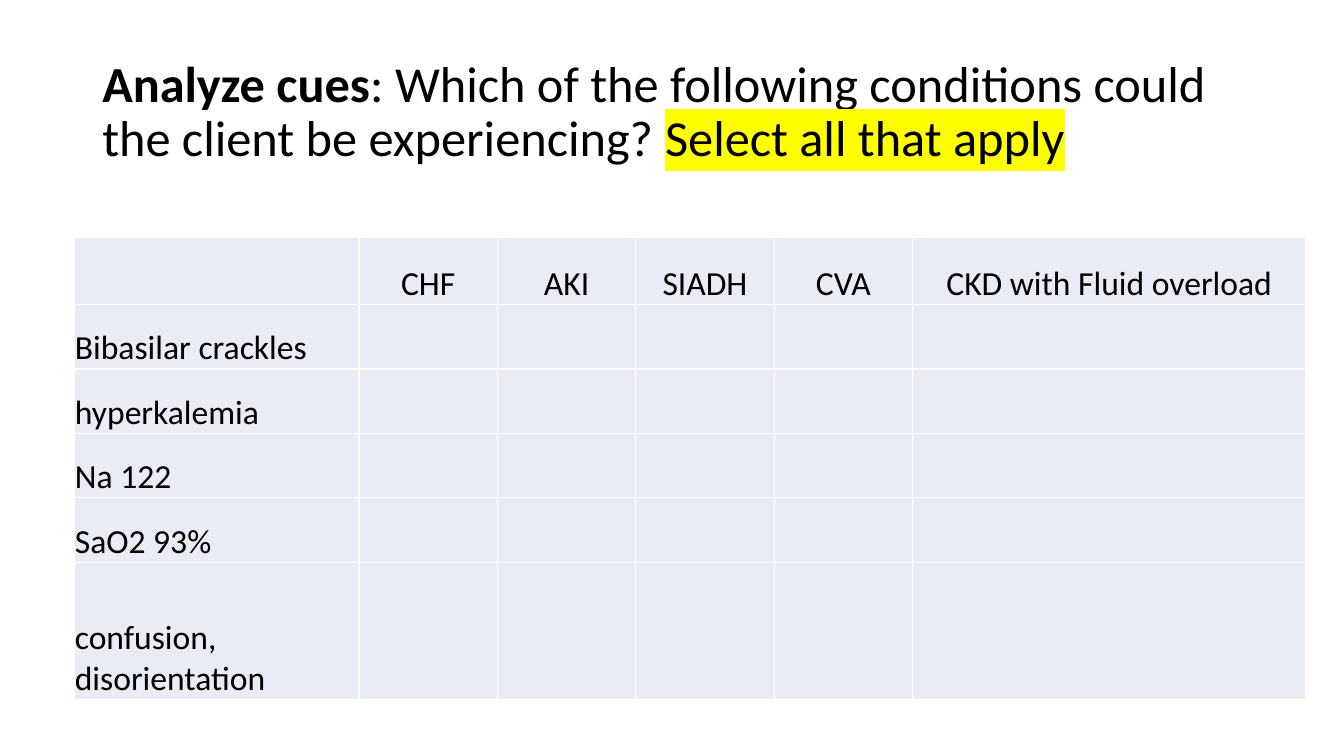
from lxml import etree
from pptx import Presentation
from pptx import util as u
from pptx.dml import color as dml
from pptx.enum import text
from pptx.oxml import ns

CONDITIONS = ["CHF", "AKI", "SIADH", "CVA", "CKD with Fluid overload"]
CUES = ["Bibasilar crackles", "hyperkalemia", "Na 122", "SaO2 93%", "confusion, disorientation"]
COLUMN_WIDTHS = [203.6] + [98.9] * 4 + [280.8]
ROW_HEIGHTS = [48.2] + [46] * 4 + [97.9]


def rgb(value):
    return dml.RGBColor.from_string(value)


def add_color(parent, value):
    etree.SubElement(parent, ns.qn("a:srgbClr"), val=value)


class SlideBuilder:
    font = "Calibri"
    ink = "000000"
    cell_fill = "E9EBF5"
    border = "FFFFFF"
    marker = "FFFF00"

    def __init__(self, slide):
        self.slide = slide

    def style(self, span, size, bold=False):
        span.font.name = self.font
        span.font.size = u.Pt(size)
        span.font.bold = bold
        span.font.color.rgb = rgb(self.ink)

    def highlight(self, span):
        highlight = etree.Element(ns.qn("a:highlight"))
        add_color(highlight, self.marker)
        span.font.fill.solid()
        span.font.color.rgb = rgb(self.ink)
        span._r.rPr.find(ns.qn("a:solidFill")).addnext(highlight)

    def title(self, left, top, width, height, lead, question, instruction):
        box = self.slide.shapes.add_textbox(*map(u.Pt, (left, top, width, height)))
        frame = box.text_frame
        frame.word_wrap = True
        frame.vertical_anchor = text.MSO_ANCHOR.MIDDLE
        para = frame.paragraphs[0]
        para.line_spacing = 0.9
        for words in (lead, question, instruction):
            span = para.add_run()
            span.text = words
            self.style(span, 36, bold=words == lead)
        self.highlight(span)

    def borders(self, cell):
        properties = cell._tc.get_or_add_tcPr()
        for side in ("lnL", "lnR", "lnT", "lnB"):
            line = etree.SubElement(properties, ns.qn(f"a:{side}"), w=str(u.Pt(1)))
            add_color(etree.SubElement(line, ns.qn("a:solidFill")), self.border)

    def cell(self, cell, words, align):
        self.borders(cell)
        cell.fill.solid()
        cell.fill.fore_color.rgb = rgb(self.cell_fill)
        cell.vertical_anchor = text.MSO_ANCHOR.BOTTOM
        cell.margin_left = cell.margin_right = cell.margin_top = u.Pt(0.7)
        cell.margin_bottom = 0
        if words:
            para = cell.text_frame.paragraphs[0]
            para.text = words
            para.alignment = align
            self.style(para.runs[0], 24)

    def table(self, left, top, widths, heights, rows):
        frame = self.slide.shapes.add_table(
            len(heights), len(widths),
            *map(u.Pt, (left, top, sum(widths), sum(heights))))
        table = frame.table
        table.first_row = table.horz_banding = False
        for column, width in zip(table.columns, widths):
            column.width = u.Pt(width)
        for row, height in zip(table.rows, heights):
            row.height = u.Pt(height)
        for r, row in enumerate(rows):
            align = text.PP_ALIGN.LEFT if r else text.PP_ALIGN.CENTER
            for c, words in enumerate(row):
                self.cell(table.cell(r, c), words, align)


def main():
    deck = Presentation()
    deck.slide_width, deck.slide_height = u.Pt(960), u.Pt(540)
    page = SlideBuilder(deck.slides.add_slide(deck.slide_layouts[6]))
    page.title(66, 28.8, 828, 104.4, "Analyze cues",
               ": Which of the following conditions could the client be experiencing? ",
               "Select all that apply")
    rows = [[""] + CONDITIONS] + [[cue] + [""] * len(CONDITIONS) for cue in CUES]
    page.table(52.8, 169.4, COLUMN_WIDTHS, ROW_HEIGHTS, rows)
    deck.save("out.pptx")


if __name__ == "__main__":
    main()
